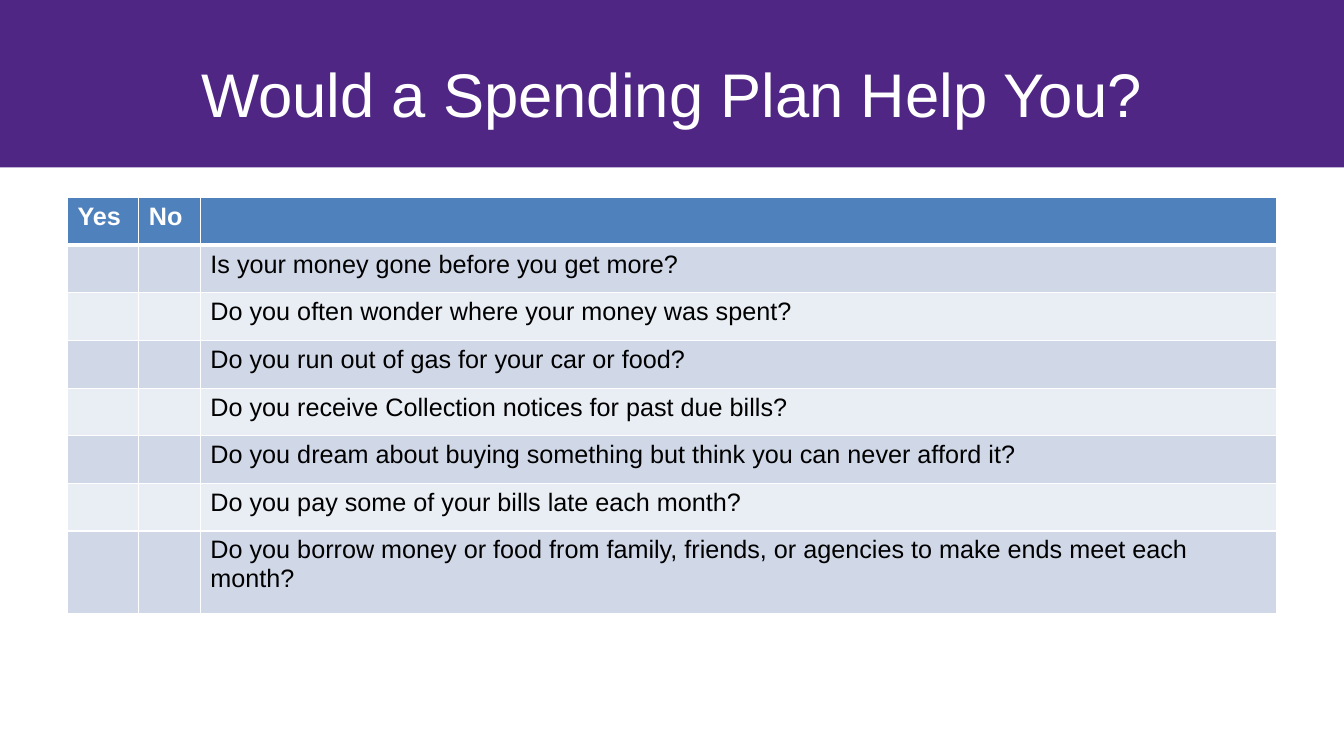
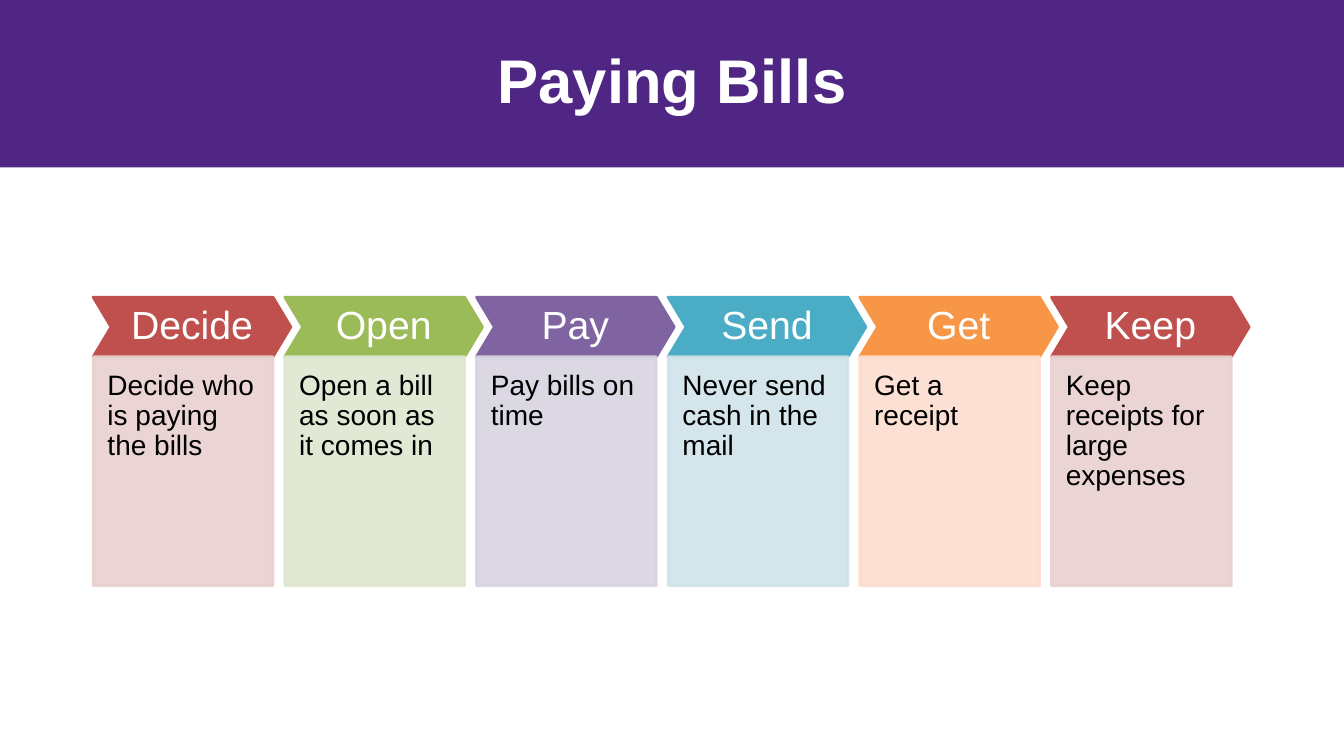
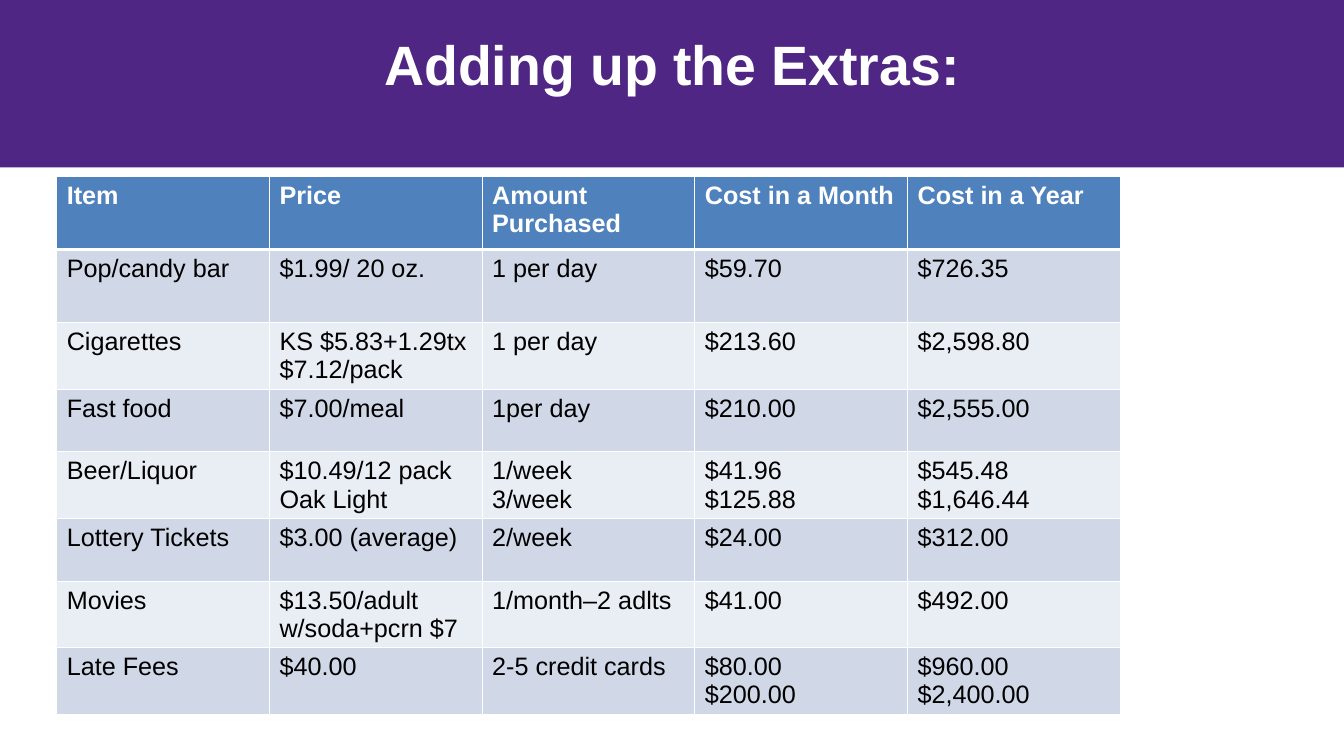
import lxml.etree
import pptx
import pptx.dml.color
import pptx.enum.shapes
import pptx.enum.text
import pptx.oxml.ns
import pptx.util

Cm = pptx.util.Cm
Pt = pptx.util.Pt
RGBColor = pptx.dml.color.RGBColor
MSO_SHAPE = pptx.enum.shapes.MSO_SHAPE
MSO_ANCHOR = pptx.enum.text.MSO_ANCHOR
PP_ALIGN = pptx.enum.text.PP_ALIGN
qn = pptx.oxml.ns.qn

FONT = "Arial"
WHITE = RGBColor(0xFF, 0xFF, 0xFF)
BLACK = RGBColor(0x00, 0x00, 0x00)
PURPLE = RGBColor(0x4F, 0x26, 0x83)
HEADER_BLUE = RGBColor(0x4F, 0x81, 0xBD)
ROW_DARK = RGBColor(0xD0, 0xD8, 0xE8)
ROW_LIGHT = RGBColor(0xE9, 0xED, 0xF4)
RED, PALE_RED = RGBColor(0xC0, 0x50, 0x4D), RGBColor(0xE8, 0xD0, 0xD0)
GREEN, PALE_GREEN = RGBColor(0x9B, 0xBB, 0x59), RGBColor(0xDE, 0xE7, 0xD1)
VIOLET, PALE_VIOLET = RGBColor(0x80, 0x64, 0xA2), RGBColor(0xD8, 0xD3, 0xE0)
TEAL, PALE_TEAL = RGBColor(0x4B, 0xAC, 0xC6), RGBColor(0xD0, 0xE3, 0xEA)
ORANGE, PALE_ORANGE = RGBColor(0xF7, 0x96, 0x46), RGBColor(0xFC, 0xDD, 0xCF)

SLIDE_WIDTH, SLIDE_HEIGHT = Cm(33.87), Cm(19.05)
BAND_HEIGHT = Cm(4.22)
TITLE_BOX = (Cm(1.7), Cm(0.76), Cm(30.48), Cm(3.18))

QUESTIONS = [
    ["Yes", "No", ""],
    ["", "", "Is your money gone before you get more?"],
    ["", "", "Do you often wonder where your money was spent?"],
    ["", "", "Do you run out of gas for your car or food?"],
    ["", "", "Do you receive Collection notices for past due bills?"],
    ["", "", "Do you dream about buying something but think you can never afford it?"],
    ["", "", "Do you pay some of your bills late each month?"],
    ["", "", "Do you borrow money or food from family, friends, or agencies to make ends meet each month?"],
]
BILL_STEPS = [
    ("Decide", "Decide who is paying the bills", RED, PALE_RED),
    ("Open", "Open a bill as soon as it comes in", GREEN, PALE_GREEN),
    ("Pay", "Pay bills on time", VIOLET, PALE_VIOLET),
    ("Send", "Never send cash in the mail", TEAL, PALE_TEAL),
    ("Get", "Get a receipt", ORANGE, PALE_ORANGE),
    ("Keep", "Keep receipts for large expenses", RED, PALE_RED),
]
EXTRAS = [
    ["Item", "Price", "Amount Purchased", "Cost in a Month", "Cost in a Year"],
    ["Pop/candy bar", "$1.99/ 20 oz.", "1 per day", "$59.70", "$726.35"],
    ["Cigarettes", "KS $5.83+1.29tx\n$7.12/pack", "1 per day", "$213.60", "$2,598.80"],
    ["Fast food", "$7.00/meal", "1per day", "$210.00", "$2,555.00"],
    ["Beer/Liquor", "$10.49/12 pack\nOak Light", "1/week\n3/week", "$41.96\n$125.88", "$545.48\n$1,646.44"],
    ["Lottery Tickets", "$3.00 (average)", "2/week", "$24.00", "$312.00"],
    ["Movies", "$13.50/adult\nw/soda+pcrn $7", "1/month–2 adlts", "$41.00", "$492.00"],
    ["Late Fees", "$40.00", "2-5 credit cards", "$80.00\n$200.00", "$960.00\n$2,400.00"],
]


def write_text(text_frame, text, size, color, bold=False, alignment=PP_ALIGN.LEFT, line_spacing=None):
    for index, line in enumerate(text.split("\n")):
        paragraph = text_frame.add_paragraph() if index else text_frame.paragraphs[0]
        paragraph.alignment = alignment
        if line_spacing:
            paragraph.line_spacing = line_spacing
        paragraph.font.size = Pt(size)
        if line:
            run = paragraph.add_run()
            run.text = line
            run.font.name = FONT
            run.font.size = Pt(size)
            run.font.bold = bold
            run.font.color.rgb = color


def add_band(slide):
    band = slide.shapes.add_shape(MSO_SHAPE.RECTANGLE, 0, 0, SLIDE_WIDTH, BAND_HEIGHT)
    band.shadow.inherit = False
    band.fill.solid()
    band.fill.fore_color.rgb = PURPLE
    band.line.fill.background()
    band.element.xpath(".//p:cNvPr")[0].set("id", "20")
    slide.slide_layout.shapes.element.insert(2, band.element)


def add_titled_slide(presentation, text, box=TITLE_BOX, size=44, bold=True,
                     anchor=MSO_ANCHOR.TOP, top_inset=0, line_spacing=None):
    slide = presentation.slides.add_slide(presentation.slide_layouts.get_by_name("Title Only"))
    title = slide.shapes.title
    title.left, title.top, title.width, title.height = box
    text_frame = title.text_frame
    text_frame.word_wrap = True
    text_frame.auto_size = pptx.enum.text.MSO_AUTO_SIZE.NONE
    text_frame.vertical_anchor = anchor
    text_frame.margin_top = top_inset
    write_text(text_frame, text, size, WHITE, bold, PP_ALIGN.CENTER, line_spacing)
    return slide


def set_borders(cell, top_width, bottom_width):
    properties = cell._tc.get_or_add_tcPr()
    for side, width in (("L", 1), ("R", 1), ("T", top_width), ("B", bottom_width)):
        line = lxml.etree.SubElement(properties, qn(f"a:ln{side}"), w=str(Pt(width)))
        fill = lxml.etree.SubElement(line, qn("a:solidFill"))
        lxml.etree.SubElement(fill, qn("a:srgbClr"), val=str(WHITE))


def add_banded_table(slide, left, top, column_widths, row_heights, rows):
    table = slide.shapes.add_table(len(rows), len(column_widths), left, top,
                                   sum(column_widths), sum(row_heights)).table
    for column, width in zip(table.columns, column_widths):
        column.width = width
    for row, height in zip(table.rows, row_heights):
        row.height = height
    for row_index, texts in enumerate(rows):
        is_header = row_index == 0
        row_color = HEADER_BLUE if is_header else (ROW_LIGHT, ROW_DARK)[row_index % 2]
        for column_index, text in enumerate(texts):
            cell = table.cell(row_index, column_index)
            set_borders(cell, 3 if row_index == 1 else 1, 3 if is_header else 1)
            cell.fill.solid()
            cell.fill.fore_color.rgb = row_color
            write_text(cell.text_frame, text, 18, WHITE if is_header else BLACK, is_header)


def add_step_shape(slide, kind, box, color, insets, anchor):
    shape = slide.shapes.add_shape(kind, *box)
    shape.shadow.inherit = False
    shape.fill.solid()
    shape.fill.fore_color.rgb = color
    shape.line.color.rgb = color
    shape.line.width = Pt(2)
    text_frame = shape.text_frame
    text_frame.word_wrap = True
    text_frame.vertical_anchor = anchor
    (text_frame.margin_left, text_frame.margin_top,
     text_frame.margin_right, text_frame.margin_bottom) = insets
    return shape


def add_bill_step(slide, left, top, width, heading, detail, color, pale_color):
    heading_height, card_height = Cm(1.5), Cm(5.77)
    chevron = add_step_shape(slide, MSO_SHAPE.CHEVRON, (left, top, width, heading_height),
                             color, [Cm(0.18)] * 4, MSO_ANCHOR.MIDDLE)
    chevron.adjustments[0] = 0.3
    write_text(chevron.text_frame, heading, 28, WHITE, alignment=PP_ALIGN.CENTER, line_spacing=0.9)
    card_box = (left, top + heading_height, width - Cm(0.45), card_height)
    card = add_step_shape(slide, MSO_SHAPE.RECTANGLE, card_box, pale_color,
                          [Cm(0.36)] * 3 + [Cm(0.71)], MSO_ANCHOR.TOP)
    for color_element in card.element.spPr.iter(qn("a:srgbClr")):
        lxml.etree.SubElement(color_element, qn("a:alpha"), val="90000")
    write_text(card.text_frame, detail, 20, BLACK, line_spacing=0.9)


def build_question_slide(presentation):
    slide = add_titled_slide(presentation, "Would a Spending Plan Help You?", bold=False,
                             anchor=MSO_ANCHOR.MIDDLE, top_inset=Cm(0.13))
    add_band(slide)
    add_banded_table(slide, Cm(1.7), Cm(4.98), [Cm(1.8), Cm(1.55), Cm(27.13)],
                     [Cm(1.2)] * 7 + [Cm(2.08)], QUESTIONS)


def build_bills_slide(presentation):
    slide = add_titled_slide(presentation, "Paying Bills",
                             box=(Cm(2.34), Cm(1.02), Cm(29.21), Cm(3.68)),
                             top_inset=Cm(0.25), line_spacing=0.9)
    for index, step in enumerate(BILL_STEPS):
        add_bill_step(slide, Cm(2.35) + index * Cm(4.83), Cm(7.49), Cm(4.98), *step)


def build_extras_slide(presentation):
    slide = add_titled_slide(presentation, "Adding up the Extras:", size=39.6)
    add_banded_table(slide, Cm(1.43), Cm(4.45), [Cm(5.36)] * 5,
                     [Cm(1.84)] * 2 + [Cm(1.58)] * 6, EXTRAS)


def main():
    presentation = pptx.Presentation()
    presentation.slide_width, presentation.slide_height = SLIDE_WIDTH, SLIDE_HEIGHT
    build_question_slide(presentation)
    build_bills_slide(presentation)
    build_extras_slide(presentation)
    presentation.save("out.pptx")


if __name__ == "__main__":
    main()
